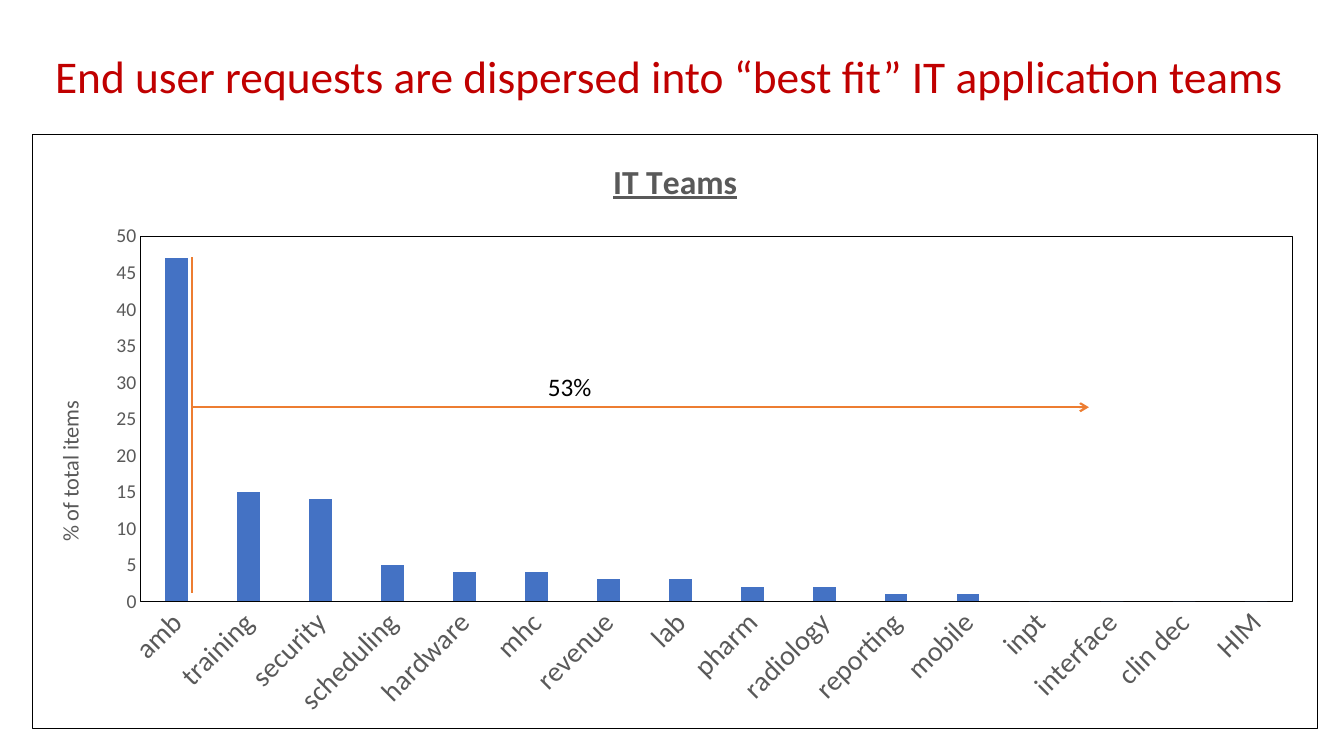
from lxml import etree
from pptx import Presentation
from pptx.chart.data import CategoryChartData
from pptx.dml.color import RGBColor
from pptx.enum.chart import XL_CHART_TYPE, XL_TICK_MARK
from pptx.enum.shapes import MSO_CONNECTOR
from pptx.enum.text import MSO_ANCHOR, PP_ALIGN
from pptx.oxml import parse_xml
from pptx.oxml.ns import nsdecls, qn
from pptx.util import Inches, Pt

WIDTH, HEIGHT = 13.33, 7.5
CHART_WIDTH, CHART_HEIGHT = 12.75, 5.9
FONT = "Calibri"
BLACK, WHITE, GREY = "000000", "FFFFFF", "595959"
RED, BLUE, ORANGE = "C00000", "4472C4", "ED7D31"
ARROW_START, ARROW_END, ARROW_LEVEL = 1.9, 10.8, 4.04

TEAM_SHARES = {
    "amb": 47, "training": 15, "security": 14, "scheduling": 5,
    "hardware": 4, "mhc": 4, "revenue": 3, "lab": 3,
    "pharm": 2, "radiology": 2, "reporting": 1, "mobile": 1,
    "inpt": 0, "interface": 0, "clin dec": 0, "HIM": 0,
}


def color(hex_value):
    return RGBColor.from_string(hex_value)


def set_font(font, size, hex_value, bold=False):
    font.name = FONT
    font.size = Pt(size)
    font.bold = bold
    font.color.rgb = color(hex_value)


def framed(fill):
    """Return chart shape properties with a thin black outline."""
    return parse_xml(
        f'<c:spPr {nsdecls("c", "a")}>{fill}<a:ln w="9525"><a:solidFill>'
        f'<a:srgbClr val="{BLACK}"/></a:solidFill></a:ln></c:spPr>')


def set_layout(element, index, **inches):
    """Place a chart part, given in inches from the chart's corner."""
    for old in element.findall(qn("c:layout")):
        element.remove(old)
    layout = etree.Element(qn("c:layout"))
    manual = etree.SubElement(layout, qn("c:manualLayout"))
    if "w" in inches:
        etree.SubElement(manual, qn("c:layoutTarget")).set("val", "inner")
    for name in ("x", "y"):
        etree.SubElement(manual, qn(f"c:{name}Mode")).set("val", "edge")
    for name, length in inches.items():
        whole = CHART_WIDTH if name in "xw" else CHART_HEIGHT
        etree.SubElement(manual, qn(f"c:{name}")).set("val", str(length / whole))
    element.insert(index, layout)


def write_chart_title(title, text, size, x, y, bold=False):
    para = title.text_frame.paragraphs[0]
    para.text = text
    set_font(para.font, size, GREY, bold)
    para.font.underline = bold
    set_layout(title._element, 1, x=x, y=y)


def format_axis(axis, size):
    axis.has_major_gridlines = False
    axis.major_tick_mark = axis.minor_tick_mark = XL_TICK_MARK.NONE
    axis.format.line.color.rgb = color(BLACK)
    axis.format.line.width = Pt(0.75)
    set_font(axis.tick_labels.font, size, GREY)


def write_title(slide, text):
    title = slide.shapes.title
    title.left, title.top = Inches(0.2), Inches(0.4)
    title.width, title.height = Inches(12.87), Inches(0.77)
    title.text_frame.vertical_anchor = MSO_ANCHOR.MIDDLE
    para = title.text_frame.paragraphs[0]
    para.text = text
    para.alignment = PP_ALIGN.CENTER
    para.line_spacing = 0.9
    set_font(para.font, 32.4, RED)


def add_team_chart(slide):
    data = CategoryChartData()
    data.categories = list(TEAM_SHARES)
    data.add_series("Series 1", list(TEAM_SHARES.values()))
    chart = slide.shapes.add_chart(
        XL_CHART_TYPE.COLUMN_CLUSTERED, Inches(0.32), Inches(1.33),
        Inches(CHART_WIDTH), Inches(CHART_HEIGHT), data).chart
    set_font(chart.font, 10, BLACK)
    chart.has_legend = False
    chart.has_title = True
    write_chart_title(chart.chart_title, "IT Teams", 24, 5.7, 0.18, bold=True)

    plot = chart.plots[0]
    plot.gap_width, plot.overlap = 219, -27
    plot.vary_by_categories = False
    bars = plot.series[0].format.fill
    bars.solid()
    bars.fore_color.rgb = color(BLUE)

    teams, shares = chart.category_axis, chart.value_axis
    format_axis(teams, 20)
    teams._element.find(qn("c:txPr")).find(qn("a:bodyPr")).set("rot", "-2700000")
    format_axis(shares, 14)
    shares.minimum_scale, shares.maximum_scale, shares.major_unit = 0, 50, 5
    shares.tick_labels.number_format = "0"
    shares.tick_labels.number_format_is_linked = False
    shares.has_title = True
    write_chart_title(shares.axis_title, "% of total items", 16, 0.18, 2.61)
    body = shares.axis_title.text_frame._txBody.find(qn("a:bodyPr"))
    body.set("rot", "-5400000")
    body.set("vert", "horz")

    chart_element = chart._chartSpace.find(qn("c:chart"))
    plot_area = chart_element.find(qn("c:plotArea"))
    set_layout(plot_area, 0, x=1.07, y=1.01, w=11.43, h=3.63)
    plot_area.append(framed("<a:noFill/>"))
    chart_element.addnext(framed(
        f'<a:solidFill><a:srgbClr val="{WHITE}"/></a:solidFill>'))


def add_line(slide, start, end, arrow=False):
    line = slide.shapes.add_connector(
        MSO_CONNECTOR.STRAIGHT, *(Inches(value) for value in start + end))
    line.line.color.rgb = color(ORANGE)
    line.line.width = Pt(1.5)
    if arrow:
        outline = line.line._get_or_add_ln()
        etree.SubElement(outline, qn("a:tailEnd")).set("type", "arrow")
    etree.SubElement(line._element.spPr, qn("a:effectLst"))


def add_label(slide, text, left, top, width, height):
    box = slide.shapes.add_textbox(
        Inches(left), Inches(top), Inches(width), Inches(height))
    box.text_frame.word_wrap = True
    para = box.text_frame.paragraphs[0]
    para.text = text
    para.alignment = PP_ALIGN.CENTER
    set_font(para.font, 18, BLACK)


def main():
    deck = Presentation()
    deck.slide_width, deck.slide_height = Inches(WIDTH), Inches(HEIGHT)
    slide = deck.slides.add_slide(deck.slide_layouts.get_by_name("Title Only"))
    write_title(slide, "End user requests are dispersed into “best fit” IT application teams")
    add_team_chart(slide)
    add_line(slide, (ARROW_START, 2.55), (ARROW_START, 5.88))
    add_label(slide, "53%", 5.15, 3.63, 1, 0.59)
    add_line(slide, (ARROW_START, ARROW_LEVEL), (ARROW_END, ARROW_LEVEL), arrow=True)
    deck.save("out.pptx")


if __name__ == "__main__":
    main()
